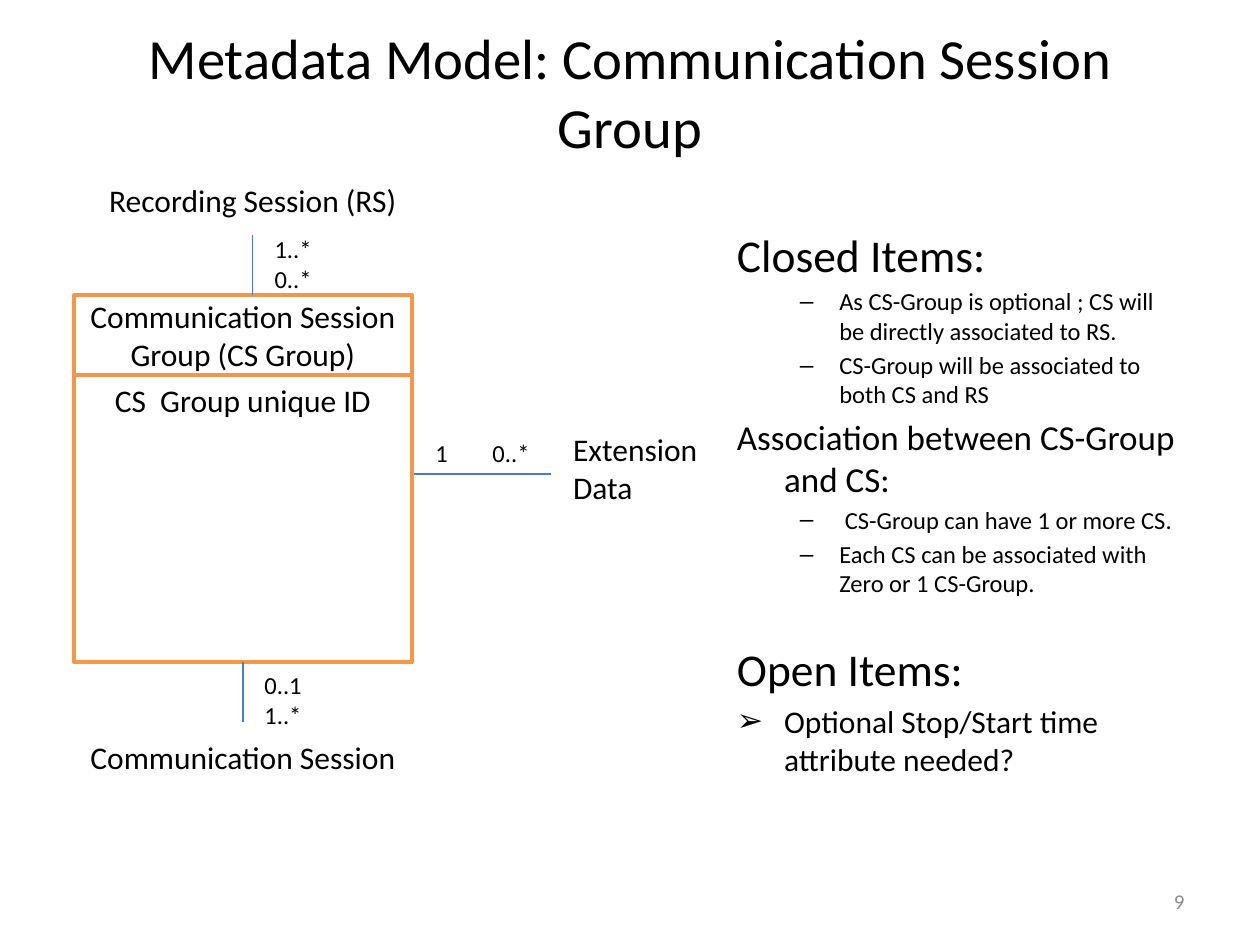
from lxml import etree
from pptx import Presentation
from pptx.dml.color import RGBColor
from pptx.enum.shapes import MSO_CONNECTOR, MSO_SHAPE
from pptx.enum.text import MSO_ANCHOR, MSO_AUTO_SIZE, PP_ALIGN
from pptx.oxml.ns import qn
from pptx.util import Pt

BLACK = RGBColor(0x00, 0x00, 0x00)
WHITE = RGBColor(0xFF, 0xFF, 0xFF)
GREY = RGBColor(0x8C, 0x8C, 0x8C)
BLUE = RGBColor(0x4B, 0x7E, 0xBC)
ORANGE = RGBColor(0xF7, 0x96, 0x46)
FONT = "Calibri"
LEFT, CENTER, RIGHT = PP_ALIGN.LEFT, PP_ALIGN.CENTER, PP_ALIGN.RIGHT
TOP, MIDDLE = MSO_ANCHOR.TOP, MSO_ANCHOR.MIDDLE
PROCESS, RECTANGLE = MSO_SHAPE.FLOWCHART_PROCESS, MSO_SHAPE.RECTANGLE
STRAIGHT = MSO_CONNECTOR.STRAIGHT
TOP_SITE, BOTTOM_SITE = 0, 2


def write_text(shape, text, size, alignment, anchor=MIDDLE, color=BLACK):
    frame = shape.text_frame
    frame.text = text
    frame.word_wrap = True
    frame.auto_size = MSO_AUTO_SIZE.NONE
    frame.vertical_anchor = anchor
    for paragraph in frame.paragraphs:
        paragraph.alignment = alignment
        for run in paragraph.runs:
            run.font.name = FONT
            run.font.size = Pt(size)
            run.font.color.rgb = color


def add_line(x1, y1, x2, y2):
    line = slide.shapes.add_connector(STRAIGHT, Pt(x1), Pt(y1), Pt(x2), Pt(y2))
    line.line.color.rgb = BLUE
    line.line.width = Pt(0.75)
    etree.SubElement(line._element.spPr, qn("a:effectLst"))
    return line


presentation = Presentation()
presentation.slide_width, presentation.slide_height = Pt(720), Pt(540)
slide = presentation.slides.add_slide(presentation.slide_layouts[5])

title = slide.shapes.title
title.left, title.top, title.width, title.height = Pt(36), Pt(21.6), Pt(648), Pt(61.2)
write_text(title, "Metadata Model: Communication Session Group", 32.4, CENTER)

# Entities: text, left, top, width, height, alignment, anchor, outlined
entities = [
    ("Recording Session (RS)", 48, 94.6, 193, 39.8, CENTER, MIDDLE, False),
    ("Communication Session Group (CS Group)", 42.3, 168.5, 193, 45.7, CENTER, MIDDLE, True),
    ("CS  Group unique ID", 42.3, 214.2, 193, 164.2, CENTER, TOP, True),
    ("Communication Session", 42.3, 412.6, 193, 39.8, CENTER, MIDDLE, False),
    ("Extension\nData", 320.4, 247.7, 102.2, 39.8, LEFT, MIDDLE, False),
]
boxes = {}
for text, left, top, width, height, alignment, anchor, outlined in entities:
    box = slide.shapes.add_shape(PROCESS, Pt(left), Pt(top), Pt(width), Pt(height))
    box.shadow.inherit = False
    if outlined:
        box.fill.solid()
        box.fill.fore_color.rgb = WHITE
        box.line.color.rgb = ORANGE
        box.line.width = Pt(2)
    else:
        box.fill.background()
        box.line.fill.background()
    write_text(box, text, 18, alignment, anchor)
    boxes[text] = box

# Multiplicities: text, left, top, width, height, alignment
multiplicities = [
    ("1..*\n0..*", 149.8, 136.8, 39.6, 28, LEFT),
    ("0..1\n1..*", 144, 385.9, 39.6, 28, LEFT),
    ("1", 238.3, 247, 28, 23, CENTER),
    ("0..*", 272.2, 247, 39.6, 23, CENTER),
]
for text, left, top, width, height, alignment in multiplicities:
    label = slide.shapes.add_shape(RECTANGLE, Pt(left), Pt(top), Pt(width), Pt(height))
    label.shadow.inherit = False
    label.fill.solid()
    label.fill.fore_color.rgb = WHITE
    label.line.fill.background()
    write_text(label, text, 14, alignment)

# Association lines lie above the white labels
recording_line = add_line(144.5, 134.4, 144.5, 168.5)
recording_line.begin_connect(boxes["Recording Session (RS)"], BOTTOM_SITE)
session_line = add_line(138.8, 378.4, 138.8, 412.6)
session_line.begin_connect(boxes["CS  Group unique ID"], BOTTOM_SITE)
session_line.end_connect(boxes["Communication Session"], TOP_SITE)
add_line(236.3, 270.8, 314.6, 270.8)

# Items: text, size, bullet, left margin, hanging indent, space before
items = [
    ("Closed Items:", 26, None, 27, 27, 0),
    ("As CS-Group is optional ; CS will be directly associated to RS.", 14, "–", 58.5, 22.5, 2.8),
    ("CS-Group will be associated to both CS and RS", 14, "–", 58.5, 22.5, 2.8),
    ("Association between CS-Group and CS:", 20, None, 27, 27, 4),
    (" CS-Group can have 1 or more CS.", 14, "–", 58.5, 22.5, 2.8),
    ("Each CS can be associated with Zero or 1 CS-Group.", 14, "–", 58.5, 22.5, 2.8),
    ("Open Items:", 26, None, 27, 27, 24.8),
    ("Optional Stop/Start time attribute needed?", 18, "➢", 27, 27, 3.6),
]
items_box = slide.shapes.add_textbox(Pt(414), Pt(126), Pt(270), Pt(396))
write_text(items_box, "\n".join(item[0] for item in items), 14, LEFT, TOP)
for paragraph, item in zip(items_box.text_frame.paragraphs, items):
    text, size, bullet, margin, hanging, space_before = item
    paragraph.runs[0].font.size = Pt(size)
    paragraph.space_before = Pt(space_before)
    properties = paragraph._p.get_or_add_pPr()
    properties.set("marL", str(Pt(margin)))
    properties.set("indent", str(-Pt(hanging)))
    if bullet:
        etree.SubElement(properties, qn("a:buFont"), typeface="Arial")
        etree.SubElement(properties, qn("a:buChar"), char=bullet)
    else:
        etree.SubElement(properties, qn("a:buNone"))

slide_number = slide.shapes.add_textbox(Pt(516), Pt(500.4), Pt(168), Pt(28.8))
write_text(slide_number, "9", 12, RIGHT, color=GREY)

presentation.save("out.pptx")
